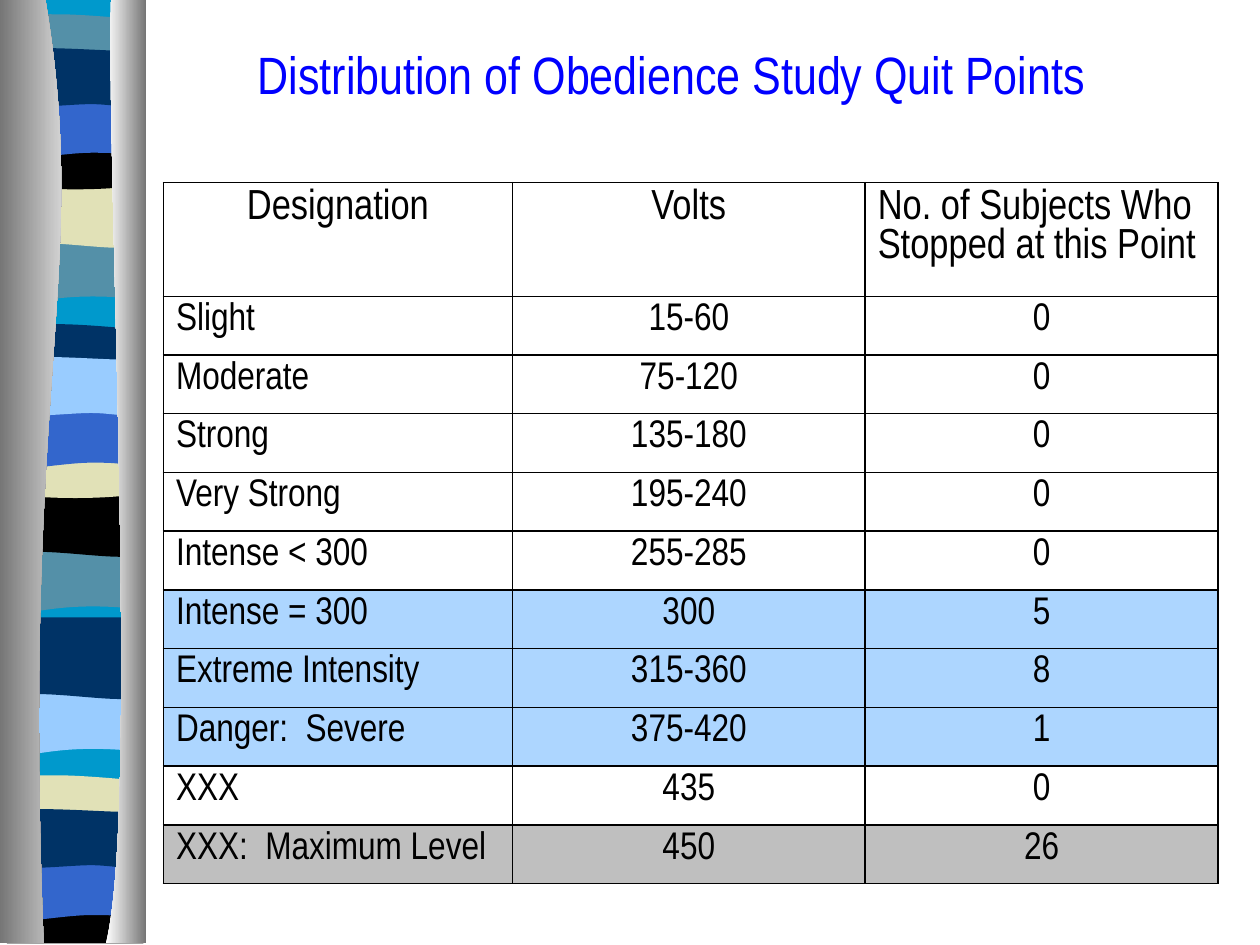
"""Build the slide on the quit points of the obedience study."""
from dataclasses import dataclass
from typing import NamedTuple

from lxml.etree import SubElement
from pptx import Presentation
from pptx.dml.color import RGBColor
from pptx.enum.text import MSO_ANCHOR, PP_ALIGN
from pptx.oxml.ns import qn
from pptx.shapes.autoshape import Shape
from pptx.slide import Slide
from pptx.table import _Cell
from pptx.util import Pt


@dataclass(frozen=True)
class Theme:
    """Colours, font and type sizes of the slide."""
    font: str = "Arial Narrow"
    title: str = "0000FF"
    ink: str = "000000"
    white: str = "FFFFFF"
    shade: str = "767676"
    teal: str = "0099CC"
    slate: str = "5490A8"
    sand: str = "E1E1B7"
    royal: str = "3366CC"
    navy: str = "003366"
    sky: str = "99CCFF"
    some: str = "ADD6FF"
    most: str = "BFBFBF"
    title_size: float = 30
    head_size: float = 24
    body_size: float = 22


class Band(NamedTuple):
    """A wavy band: its top, its outline and its colour."""
    top: float
    form: str
    hue: str


class Level(NamedTuple):
    """A table row: shock level, volts, subjects who quit and fill."""
    name: str
    volts: str
    count: str
    fill: str | None = None


Form = list[tuple[float, ...]]
T = Theme()
LEFT, RIGHT, FOOT = 4, 82, 538

FORMS: dict[str, Form] = {
    "sheet": [(RIGHT, 0), (RIGHT, FOOT), (LEFT, FOOT), (LEFT, 0)],
    "swell": [(RIGHT, 0), (RIGHT, 38), (28, 32, 17, 44, LEFT, 38), (LEFT, 0)],
    "roll": [(RIGHT, -6.5), (RIGHT, 38.5), (69, 44, 28, 34, LEFT, 38.5), (LEFT, -6.5)],
    "slip": [(RIGHT, 0), (RIGHT, 23), (69, 26.5, 17, 26.5, LEFT, 23), (LEFT, -0.5),
             (9, -4, 21, -3.3, 34, -3.3), (47, -3.3, 72, -1, RIGHT, 0)],
    "bowl": [(RIGHT, 0), (RIGHT, 27), (69, 31.5, 17, 31.5, LEFT, 27), (LEFT, 0),
             (52, 3.5, 65.5, 0, RIGHT, 0)],
    "arch": [(RIGHT, 0), (RIGHT, 38), (70, 34, 65, 34, 52, 34),
             (39, 34, 16, 38, LEFT, 38), (LEFT, 0)],
    "wave": [(RIGHT, -0.5), (RIGHT, 30), (77, 33.5, 65, 30, 52, 30),
             (39, 30, 12, 33.5, LEFT, 30), (LEFT, -0.5), (15, -4, 57, -0.5, 70, -0.5),
             (83, -0.5, 79, -0.5, RIGHT, -0.5)],
    "base": [(RIGHT, 0), (RIGHT, 26.5), (LEFT, 26.5), (LEFT, 0),
             (52, 3.5, 65.5, 0, RIGHT, 0)],
}

BANDS = [
    Band(0, "sheet", T.teal),
    Band(133.2, "swell", T.slate),
    Band(101.5, "roll", T.sand),
    Band(11.5, "slip", T.slate),
    Band(77.8, "bowl", T.ink),
    Band(53.3, "arch", T.royal),
    Band(29.5, "wave", T.navy),
    Band(310.3, "swell", T.slate),
    Band(278, "roll", T.ink),
    Band(188.6, "slip", T.navy),
    Band(254.2, "bowl", T.sand),
    Band(230.4, "arch", T.royal),
    Band(206, "wave", T.sky),
    Band(391.7, "swell", T.sky),
    Band(359.3, "roll", T.navy),
    Band(446.4, "slip", T.sand),
    Band(512.6, "base", T.ink),
    Band(488.9, "arch", T.royal),
    Band(464.4, "wave", T.navy),
]

PILLARS: list[tuple[Form, str, str]] = [
    ([(26, 0), (52, 155.5, 12, 213, 25, 539), (0, 539), (0, 0)], T.shade, T.white),
    ([(63.5, 0), (60.5, 90, 80, 465, 60.5, 539), (83.5, 539), (83.5, 0)],
     T.white, T.shade),
]

HEAD = Level("Designation", "Volts", "No. of Subjects Who Stopped at this Point")
LEVELS = [
    Level("Slight", "15-60", "0"),
    Level("Moderate", "75-120", "0"),
    Level("Strong", "135-180", "0"),
    Level("Very Strong", "195-240", "0"),
    Level("Intense < 300", "255-285", "0"),
    Level("Intense = 300", "300", "5", T.some),
    Level("Extreme Intensity", "315-360", "8", T.some),
    Level("Danger:  Severe", "375-420", "1", T.some),
    Level("XXX", "435", "0"),
    Level("XXX:  Maximum Level", "450", "26", T.most),
]


def rgb(hue: str) -> RGBColor:
    """Turn a hex string into a colour."""
    return RGBColor.from_string(hue)


def bend(shape: Shape, form: Form) -> None:
    """Join the three lines of each six-number part into one cubic curve."""
    track = shape._element.find(".//" + qn("a:path"))
    lines = iter(track.findall(qn("a:lnTo")))
    for part in form[1:]:
        group = [next(lines) for _ in range(len(part) // 2)]
        if len(group) == 3:
            curve = SubElement(track, qn("a:cubicBezTo"))
            group[0].addprevious(curve)
            for line in group:
                curve.append(line[0])
                track.remove(line)


def draw_form(slide: Slide, form: Form, top: float = 0) -> Shape:
    """Draw a closed outline without line or shadow."""
    spots = [(Pt(part[i]), Pt(part[i + 1] + top))
             for part in form for i in range(0, len(part), 2)]
    pen = slide.shapes.build_freeform(*spots[0])
    pen.add_line_segments(spots[1:], close=True)
    shape = pen.convert_to_shape()
    bend(shape, form)
    shape.shadow.inherit = False
    shape.line.fill.background()
    return shape


def draw_side(slide: Slide) -> None:
    """Draw the wavy bands between two shaded pillars."""
    for band in BANDS:
        fill = draw_form(slide, FORMS[band.form], band.top).fill
        fill.solid()
        fill.fore_color.rgb = rgb(band.hue)
    for form, *hues in PILLARS:
        fill = draw_form(slide, form).fill
        fill.gradient()
        fill.gradient_angle = 0
        for stop, hue in zip(fill.gradient_stops, hues):
            stop.color.rgb = rgb(hue)


def set_text(para, text: str, size: float, hue: str, align: PP_ALIGN) -> None:
    """Write one paragraph in the slide's font."""
    para.text = text
    para.alignment = align
    para.font.name = T.font
    para.font.size = Pt(size)
    para.font.color.rgb = rgb(hue)


def set_cell(cell: _Cell, fill: str | None) -> None:
    """Give a cell its thin black edges and its fill."""
    props = cell._tc.get_or_add_tcPr()
    for side in ("a:lnL", "a:lnR", "a:lnT", "a:lnB"):
        line = SubElement(props, qn(side), w=str(Pt(1)))
        SubElement(SubElement(line, qn("a:solidFill")), qn("a:srgbClr"), val=T.ink)
    if fill:
        cell.fill.solid()
        cell.fill.fore_color.rgb = rgb(fill)
    else:
        cell.fill.background()


def draw_table(slide: Slide) -> None:
    """Draw the table of shock levels."""
    rows = [HEAD, *LEVELS]
    wide, high = (199.4, 201.6, 201.6), [65] + [33.58] * len(LEVELS)
    table = slide.shapes.add_table(len(rows), len(wide), Pt(93.4), Pt(104.3),
                                   Pt(sum(wide)), Pt(sum(high))).table
    table.first_row = table.horz_banding = False
    for col, width in zip(table.columns, wide):
        col.width = Pt(width)
    for r, row in enumerate(rows):
        table.rows[r].height = Pt(high[r])
        size = T.head_size if row is HEAD else T.body_size
        flush = 2 if row is HEAD else 0
        for c, text in enumerate(row[:3]):
            cell = table.cell(r, c)
            align = PP_ALIGN.LEFT if c == flush else PP_ALIGN.CENTER
            set_text(cell.text_frame.paragraphs[0], text, size, T.ink, align)
            set_cell(cell, row.fill)


def draw_title(slide: Slide) -> None:
    """Place and write the title."""
    title = slide.shapes.title
    title.left, title.top, title.width, title.height = map(Pt, (138, 20.2, 491.8, 43.2))
    frame = title.text_frame
    frame.word_wrap = True
    frame.margin_left = frame.margin_right = 0
    frame.vertical_anchor = MSO_ANCHOR.MIDDLE
    set_text(frame.paragraphs[0], "Distribution of Obedience Study Quit Points",
             T.title_size, T.title, PP_ALIGN.CENTER)


def main() -> None:
    """Build and save the deck."""
    deck = Presentation()
    deck.slide_width, deck.slide_height = Pt(720), Pt(540)
    slide = deck.slides.add_slide(deck.slide_layouts[5])
    draw_side(slide)
    draw_table(slide)
    draw_title(slide)
    deck.save("out.pptx")


if __name__ == "__main__":
    main()
